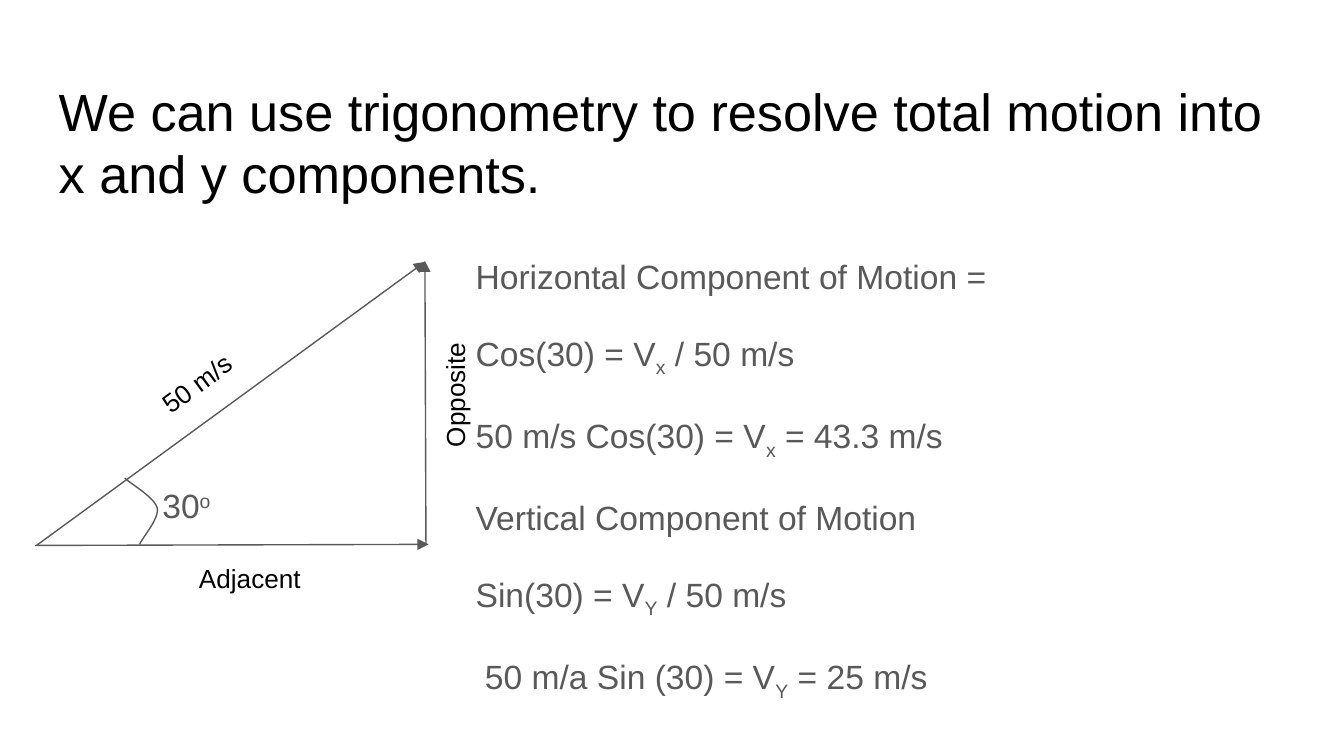
"""Build a slide that resolves a 50 m/s motion into x and y components."""
import pptx
import pptx.dml.color
import pptx.enum.shapes
import pptx.enum.text
import pptx.oxml
import pptx.oxml.ns
import pptx.util

Cm = pptx.util.Cm
Pt = pptx.util.Pt
ANCHOR = pptx.enum.text.MSO_ANCHOR
BLACK = pptx.dml.color.RGBColor(0x00, 0x00, 0x00)
GRAY = pptx.dml.color.RGBColor(0x59, 0x59, 0x59)
LINE_WIDTH = Pt(0.75)
CURVE_STEPS = 12
SUBSCRIPT, SUPERSCRIPT = -25000, 30000

TITLE = "We can use trigonometry to resolve total motion into x and y components."
TITLE_BOX = (0.86, 1.24, 23.67, 1.6)
TITLE_FORMAT = {"size": Pt(28), "color": BLACK}
BODY_FORMAT = {"size": Pt(18), "color": GRAY}
LABEL_FORMAT = {"size": Pt(14), "color": BLACK}
SPACING = {"line_spacing": 1.15, "space_after": Pt(16)}

EQUATIONS = [
    [("Horizontal Component of Motion =", 0)],
    [("Cos(30) = V", 0), ("x", SUBSCRIPT), (" / 50 m/s", 0)],
    [("50 m/s Cos(30) = V", 0), ("x", SUBSCRIPT), (" = 43.3 m/s", 0)],
    [("Vertical Component of Motion", 0)],
    [("Sin(30) = V", 0), ("Y", SUBSCRIPT), (" / 50 m/s", 0)],
    [(" 50 m/a Sin (30) = V", 0), ("Y", SUBSCRIPT), (" = 25 m/s", 0)],
]
ANGLE = [[("30", 0), ("o", SUPERSCRIPT)]]

TEXT_BOXES = [
    (EQUATIONS, (8.74, 4.47, 23.67, 9.22), 0, ANCHOR.TOP, BODY_FORMAT, SPACING),
    (ANGLE, (2.82, 8.81, 1.7, 1.14), 0, ANCHOR.TOP, BODY_FORMAT, SPACING),
    ([[("50 m/s", 0)]], (2.54, 6.3, 3.35, 0.94), 323.5, ANCHOR.TOP, LABEL_FORMAT, {}),
    ([[("Adjacent", 0)]], (3.51, 10.39, 2.69, 1.07), 0, ANCHOR.MIDDLE, LABEL_FORMAT, {}),
    ([[("Opposite", 0)]], (7.34, 6.88, 2.51, 1.14), 270, ANCHOR.MIDDLE, LABEL_FORMAT, {}),
]
ARROWS = [
    ((0.69, 10.31), (8.03, 4.95)),
    ((8.05, 10.29), (8.03, 4.93)),
    ((0.66, 10.31), (8.1, 10.29)),
]
ANGLE_CURVES = [
    ((2.36, 9.04), (2.46, 9.14), (2.92, 9.4), (2.97, 9.6)),
    ((2.97, 9.6), (3.02, 9.8), (2.69, 10.16), (2.64, 10.29)),
]


def set_attributes(target, values):
    for name, value in values.items():
        setattr(target, name, value)


def place(shape, box):
    set_attributes(shape, dict(zip(("left", "top", "width", "height"), map(Cm, box))))


def fill_text(shape, paragraphs, text_format, paragraph_format, anchor):
    frame = shape.text_frame
    margins = {f"margin_{side}": Cm(0.25) for side in ("left", "top", "right", "bottom")}
    set_attributes(frame, {
        "word_wrap": True,
        "auto_size": pptx.enum.text.MSO_AUTO_SIZE.NONE,
        "vertical_anchor": anchor,
        **margins,
    })
    for index, runs in enumerate(paragraphs):
        paragraph = frame.add_paragraph() if index else frame.paragraphs[0]
        set_attributes(paragraph, {"alignment": pptx.enum.text.PP_ALIGN.LEFT, **paragraph_format})
        for text, baseline in runs:
            run = paragraph.add_run()
            run.text = text
            set_attributes(run.font, {"name": "Arial", "size": text_format["size"]})
            run.font.color.rgb = text_format["color"]
            if baseline:
                run._r.get_or_add_rPr().set("baseline", str(baseline))


def style_line(shape):
    shape.line.color.rgb = GRAY
    shape.line.width = LINE_WIDTH


def add_arrow(slide, start, end):
    arrow = slide.shapes.add_connector(
        pptx.enum.shapes.MSO_CONNECTOR.STRAIGHT, *map(Cm, start + end))
    style_line(arrow)
    head = pptx.oxml.parse_xml(
        f'<a:tailEnd {pptx.oxml.ns.nsdecls("a")} type="triangle" w="med" len="med"/>')
    arrow.line._get_or_add_ln().append(head)
    arrow._element.spPr.append(
        pptx.oxml.parse_xml(f'<a:effectLst {pptx.oxml.ns.nsdecls("a")}/>'))


def bezier_point(curve, t):
    weights = ((1 - t) ** 3, 3 * t * (1 - t) ** 2, 3 * t ** 2 * (1 - t), t ** 3)
    return tuple(Cm(sum(w * value for w, value in zip(weights, axis))) for axis in zip(*curve))


def add_angle_mark(slide):
    points = [bezier_point(curve, step / CURVE_STEPS)
              for curve in ANGLE_CURVES for step in range(1, CURVE_STEPS + 1)]
    builder = slide.shapes.build_freeform(*bezier_point(ANGLE_CURVES[0], 0))
    builder.add_line_segments(points, close=False)
    mark = builder.convert_to_shape()
    mark.shadow.inherit = False
    mark.fill.background()
    style_line(mark)


def main():
    presentation = pptx.Presentation()
    set_attributes(presentation, {"slide_width": Cm(25.4), "slide_height": Cm(14.29)})
    slide = presentation.slides.add_slide(presentation.slide_layouts[5])
    place(slide.shapes.title, TITLE_BOX)
    fill_text(slide.shapes.title, [[(TITLE, 0)]], TITLE_FORMAT, {}, ANCHOR.TOP)
    for start, end in ARROWS:
        add_arrow(slide, start, end)
    add_angle_mark(slide)
    for paragraphs, box, rotation, anchor, text_format, paragraph_format in TEXT_BOXES:
        shape = slide.shapes.add_textbox(*map(Cm, box))
        shape.rotation = rotation
        fill_text(shape, paragraphs, text_format, paragraph_format, anchor)
    presentation.save("out.pptx")


if __name__ == "__main__":
    main()
